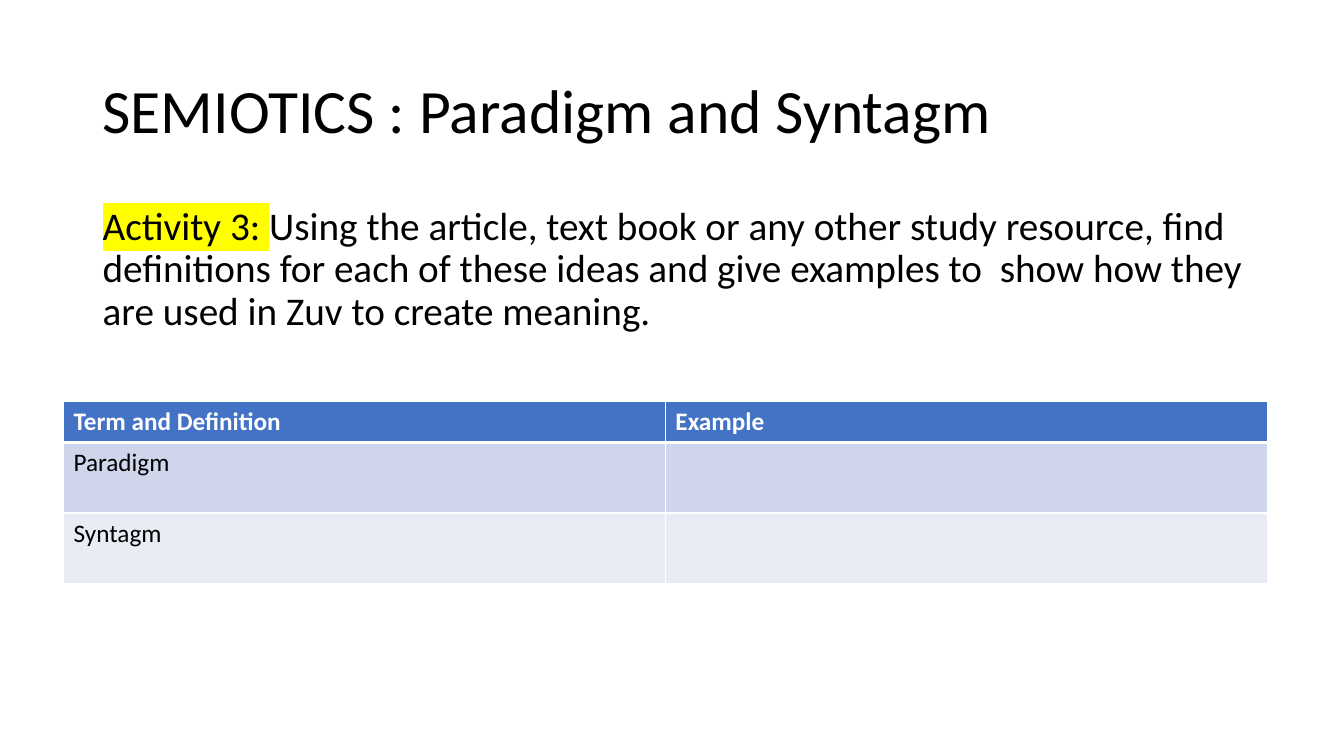
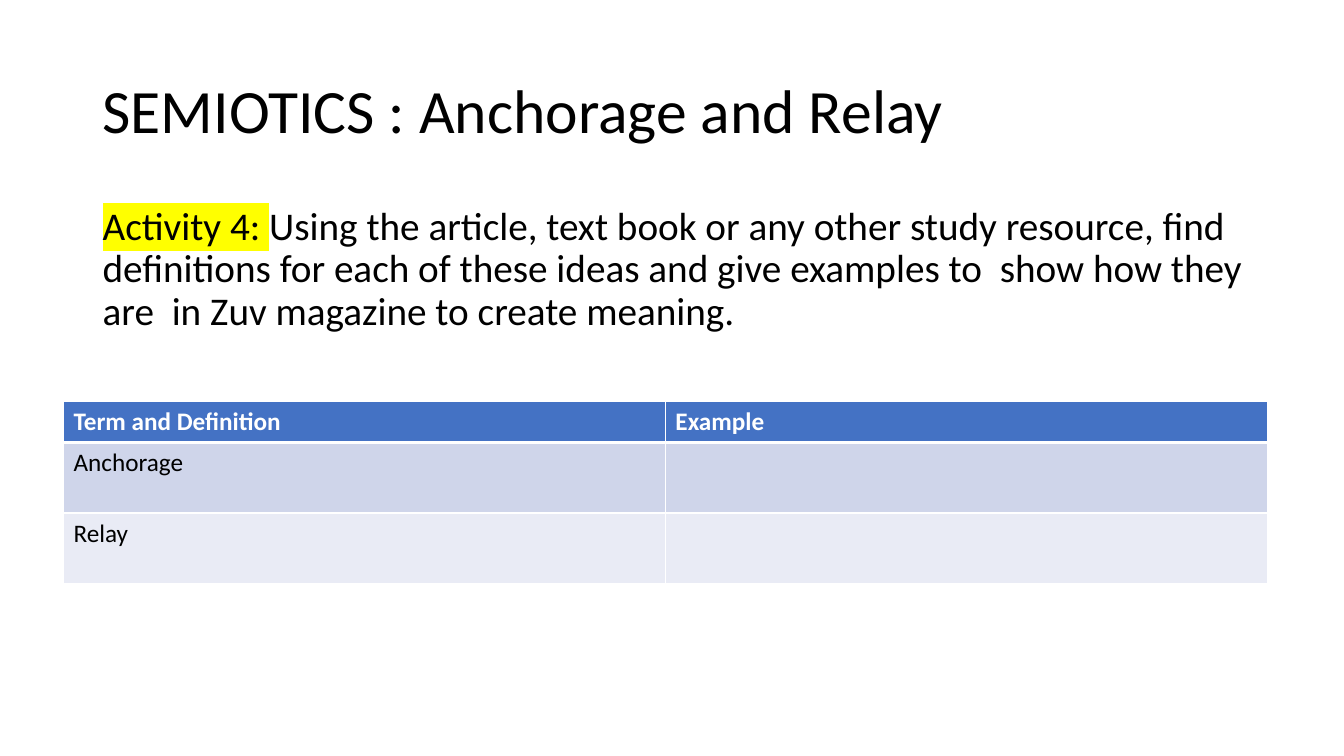
from lxml.etree import SubElement
from pptx import Presentation
from pptx.dml.color import RGBColor
from pptx.enum.text import MSO_ANCHOR
from pptx.oxml import parse_xml
from pptx.oxml.ns import nsdecls, qn
from pptx.util import Inches, Pt

FONT = "Calibri"
COLOURS = {
    "text": "000000",
    "white": "FFFFFF",
    "marker": "FFFF00",
    "header": "4472C4",
    "band_dark": "CFD5EA",
    "band_light": "E9EBF5",
}
TITLE_BOX = (0.92, 0.4, 11.5, 1.45)
TASK_BOX = (0.92, 2, 11.5, 4.76)
TABLE_BOX = (0.63, 3.98, 11.94, 1.81)
ROW_HEIGHTS = (0.41, 0.7, 0.7)
HEADINGS = ("Term and Definition", "Example")
TASK = ("Using the article, text book or any other study resource, find definitions "
        "for each of these ideas and give examples to  show how they ")

ACTIVITIES = [
    {
        "title": "SEMIOTICS : Paradigm and Syntagm",
        "label": "Activity 3: ",
        "task": TASK + "are used in Zuv to create meaning.",
        "terms": ("Paradigm", "Syntagm"),
    },
    {
        "title": "SEMIOTICS : Anchorage and Relay",
        "label": "Activity 4: ",
        "task": TASK + "are  in Zuv magazine to create meaning.",
        "terms": ("Anchorage", "Relay"),
    },
]


def rgb(name):
    return RGBColor.from_string(COLOURS[name])


def add_span(para, text, size=18, colour="text", bold=False, highlight=None):
    span = para.add_run()
    span.text = text
    font = span.font
    font.name, font.size, font.bold = FONT, Pt(size), bold
    font.color.rgb = rgb(colour)
    if highlight:
        marker = parse_xml(
            f'<a:highlight {nsdecls("a")}><a:srgbClr val="{COLOURS[highlight]}"/></a:highlight>')
        span._r.rPr.find(qn("a:solidFill")).addnext(marker)


def add_text_box(page, area, anchor=MSO_ANCHOR.TOP, space_before=0):
    """Add a wrapping text box and return its first paragraph."""
    box = page.shapes.add_textbox(*map(Inches, area))
    box.text_frame.word_wrap = True
    box.text_frame.vertical_anchor = anchor
    para = box.text_frame.paragraphs[0]
    para.line_spacing = 0.9
    para.space_before = Pt(space_before)
    return para


def add_title(page, area, title):
    add_span(add_text_box(page, area, anchor=MSO_ANCHOR.MIDDLE), title, size=44)


def add_task(page, area, label, task):
    para = add_text_box(page, area, space_before=10)
    add_span(para, label, size=28, highlight="marker")
    add_span(para, task, size=28)


def set_borders(cell, top=1, bottom=1):
    """Draw white cell borders; widths are in points."""
    properties = cell._tc.get_or_add_tcPr()
    widths = {"lnL": 1, "lnR": 1, "lnT": top, "lnB": bottom}
    for position, (side, width) in enumerate(widths.items()):
        line = parse_xml(f'<a:{side} {nsdecls("a")} w="{Pt(width)}"/>')
        fill = SubElement(line, qn("a:solidFill"))
        SubElement(fill, qn("a:srgbClr"), val=COLOURS["white"])
        properties.insert(position, line)


def add_term_table(page, area, terms):
    rows = [HEADINGS] + [(term, "") for term in terms]
    fills = ("header", "band_dark", "band_light")
    table = page.shapes.add_table(len(rows), len(HEADINGS), *map(Inches, area)).table
    for column in table.columns:
        column.width = Inches(area[2] / len(HEADINGS))
    for index, (texts, fill, height) in enumerate(zip(rows, fills, ROW_HEIGHTS)):
        table.rows[index].height = Inches(height)
        is_header = index == 0
        for cell, text in zip(table.rows[index].cells, texts):
            cell.fill.solid()
            cell.fill.fore_color.rgb = rgb(fill)
            set_borders(cell, top=3 if index == 1 else 1, bottom=3 if is_header else 1)
            if text:
                add_span(cell.text_frame.paragraphs[0], text, bold=is_header,
                         colour="white" if is_header else "text")


def add_activity_slide(deck, title, label, task, terms):
    page = deck.slides.add_slide(deck.slide_layouts[6])
    add_title(page, TITLE_BOX, title)
    add_task(page, TASK_BOX, label, task)
    add_term_table(page, TABLE_BOX, terms)


def main():
    deck = Presentation()
    deck.slide_width, deck.slide_height = Inches(13.33), Inches(7.5)
    for activity in ACTIVITIES:
        add_activity_slide(deck, **activity)
    deck.save("out.pptx")


if __name__ == "__main__":
    main()
